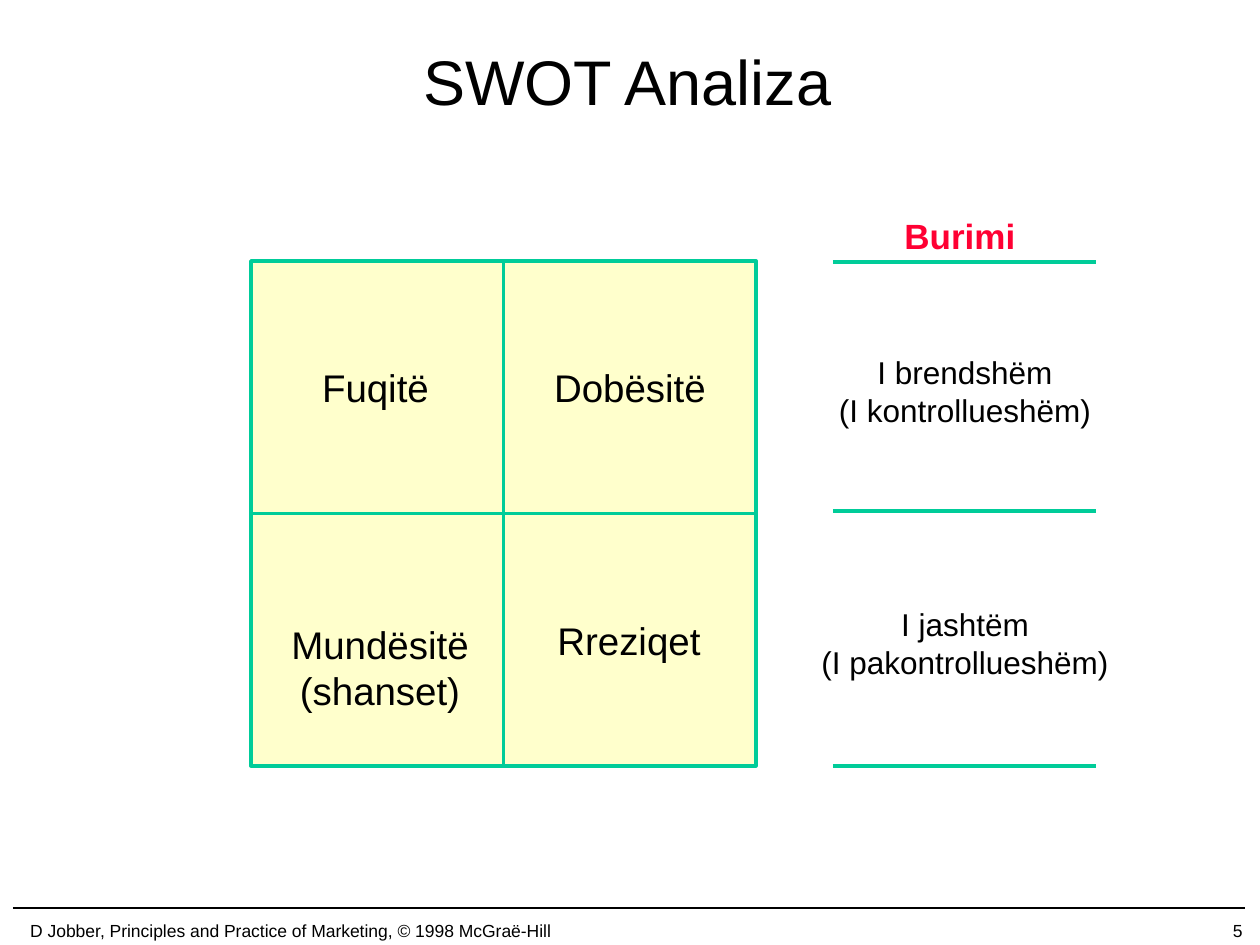
from lxml import etree
from pptx import Presentation
from pptx.dml.color import RGBColor
from pptx.enum.shapes import MSO_CONNECTOR, MSO_SHAPE
from pptx.enum.text import MSO_ANCHOR, MSO_AUTO_SIZE, PP_ALIGN
from pptx.oxml.ns import qn
from pptx.util import Emu, Pt

STRAIGHT = MSO_CONNECTOR.STRAIGHT
RECTANGLE = MSO_SHAPE.RECTANGLE
LEFT, CENTER, RIGHT = PP_ALIGN.LEFT, PP_ALIGN.CENTER, PP_ALIGN.RIGHT
TOP, MIDDLE = MSO_ANCHOR.TOP, MSO_ANCHOR.MIDDLE
TOP_SIDE, LEFT_SIDE, BOTTOM_SIDE, RIGHT_SIDE = range(4)

EMU_PER_PX = 914400 / 126
TITLE_ONLY = 5
COLORS = {"ink": "000000", "cell": "FFFFCC", "grid": "00CC99", "accent": "FF0033"}

# Text, box (left, top, width, height) and wrapping of each quadrant
QUADRANTS = [
    (["Mundësitë", "(shanset)"], (271, 615, 218, 106), True),
    (["Fuqitë"], (309, 358, 133, 59), False),
    (["Rreziqet"], (544, 611, 170, 59), False),
    (["Dobësitë"], (541, 358, 178, 59), False),
]
SOURCES = [
    ("I brendshëm\v(I kontrollueshëm)", (823, 347, 284, 88)),
    ("I jashtëm\v(I pakontrollueshëm)", (805, 599, 320, 88)),
]
SOURCE_RULES = [262, 511, 766]


def px(value):
    return Emu(round(value * EMU_PER_PX))


def color(name):
    return RGBColor.from_string(COLORS[name])


def write_text(box, lines, size, align=CENTER, anchor=TOP, wrap=False,
               ink="ink", bold=False):
    """Fill a box with one paragraph per line, all in one format."""
    frame = box.text_frame
    frame_format = {"auto_size": MSO_AUTO_SIZE.NONE, "word_wrap": wrap,
                    "vertical_anchor": anchor}
    for name, value in frame_format.items():
        setattr(frame, name, value)
    font_format = {"name": "Arial", "size": Pt(size), "bold": bold}
    for index, line in enumerate(lines):
        para = frame.add_paragraph() if index else frame.paragraphs[0]
        para.text = line
        para.alignment = align
        for span in para.runs:
            for name, value in font_format.items():
                setattr(span.font, name, value)
            span.font.color.rgb = color(ink)


def add_text(page, lines, area, size, fill=None, **text_format):
    box = page.shapes.add_textbox(*map(px, area))
    if fill:
        box.fill.solid()
        box.fill.fore_color.rgb = color(fill)
    write_text(box, lines, size, **text_format)


def add_line(page, start, end, ink="grid", width=2):
    line = page.shapes.add_connector(STRAIGHT, *map(px, start + end))
    line.line.color.rgb = color(ink)
    line.line.width = Pt(width)
    etree.SubElement(line._element.spPr, qn("a:effectLst"))
    return line


def add_title(page, text):
    title = page.shapes.title
    area = {"left": 92, "top": 1, "width": 1071, "height": 158}
    for name, value in area.items():
        setattr(title, name, px(value))
    write_text(title, [text], 36, anchor=MIDDLE, wrap=True)


def add_footer(page):
    add_line(page, (13, 908), (1245, 908), ink="ink", width=1)
    add_text(page, ["5"], (993, 914, 262, 32), 10, align=RIGHT, anchor=MIDDLE)
    add_text(page, ["D Jobber, Principles and Practice of Marketing, © 1998 McGraë-Hill"],
             (0, 914, 581, 32), 10, anchor=MIDDLE)


def add_matrix(page):
    left, top, side = 251, 261, 505
    square = page.shapes.add_shape(RECTANGLE, *map(px, (left, top, side, side)))
    square.shadow.inherit = False
    square.fill.solid()
    square.fill.fore_color.rgb = color("cell")
    square.line.color.rgb = color("grid")
    square.line.width = Pt(2)

    for lines, area, wrap in QUADRANTS:
        add_text(page, lines, area, 22, fill="cell", wrap=wrap)

    # Dividers join the middles of opposite sides
    middle_x, middle_y = left + side / 2, top + side / 2
    dividers = [
        ((middle_x, top), (middle_x, top + side), TOP_SIDE, BOTTOM_SIDE),
        ((left, middle_y), (left + side, middle_y), LEFT_SIDE, RIGHT_SIDE),
    ]
    for start, end, first_side, last_side in dividers:
        divider = add_line(page, start, end)
        divider.begin_connect(square, first_side)
        divider.end_connect(square, last_side)


def add_sources(page):
    for text, area in SOURCES:
        add_text(page, [text], area, 18)
    add_text(page, ["Burimi"], (892, 208, 137, 54), 20, align=LEFT,
             ink="accent", bold=True)
    for y in SOURCE_RULES:
        add_line(page, (833, y), (1096, y))


def main():
    deck = Presentation()
    deck.slide_width, deck.slide_height = px(1260), px(945)
    page = deck.slides.add_slide(deck.slide_layouts[TITLE_ONLY])
    add_footer(page)
    add_title(page, "SWOT Analiza")
    add_matrix(page)
    add_sources(page)
    deck.save("out.pptx")


if __name__ == "__main__":
    main()
